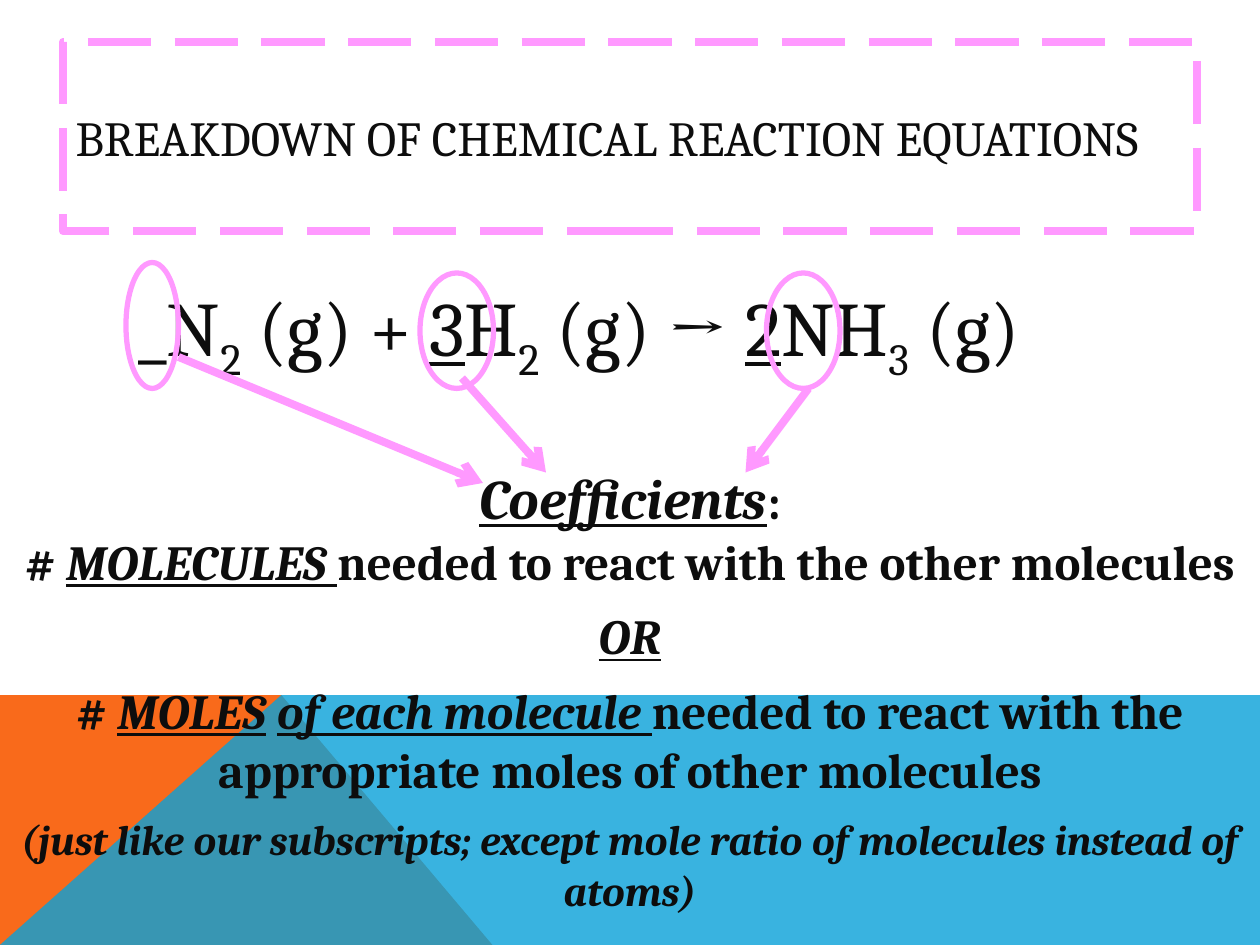
from lxml import etree
from pptx import Presentation
from pptx.dml.color import RGBColor
from pptx.enum.dml import MSO_LINE
from pptx.enum.shapes import MSO_CONNECTOR, MSO_SHAPE
from pptx.enum.text import MSO_ANCHOR, PP_ALIGN
from pptx.oxml.ns import qn
from pptx.util import Pt

PX = 7620  # EMU per px, 120 px to the inch
FONT = "Cambria"
COLORS = {"text": "0D0D0D", "pink": "FF99FF", "orange": "F96A1B", "blue": "08A1D9"}
DASH = MSO_LINE.LONG_DASH
OVAL, STRAIGHT = MSO_SHAPE.OVAL, MSO_CONNECTOR.STRAIGHT
LEFT, CENTER, MIDDLE = PP_ALIGN.LEFT, PP_ALIGN.CENTER, MSO_ANCHOR.MIDDLE


def rgb(name):
    return RGBColor.from_string(COLORS[name])


def add_run(p, text, size, style=""):
    """Style letters: b bold, i italic, u underline, s subscript."""
    r = p.add_run()
    r.text = text
    r.font.name, r.font.size = FONT, Pt(size)
    r.font.color.rgb = rgb("text")
    r.font.bold, r.font.italic, r.font.underline = (c in style for c in "biu")
    if "s" in style:
        r._r.get_or_add_rPr().set("baseline", "-25000")


prs = Presentation()
prs.slide_width, prs.slide_height = 1200 * PX, 900 * PX
s = prs.slides.add_slide(prs.slide_layouts[5])

# Coloured band at the foot
bands = [
    ("orange", [(0, 900), (0, 662), (268, 662), (469, 900)]),
    ("blue", [(0, 900), (268, 662), (1200, 662), (1200, 900)]),
]
for color, points in bands:
    builder = s.shapes.build_freeform(*points[0], scale=PX)
    builder.add_line_segments(points[1:], close=True)
    sp = builder.convert_to_shape()
    sp.shadow.inherit = False
    sp.fill.solid()
    sp.fill.fore_color.rgb = rgb(color)
    sp.line.fill.background()
    if color == "blue":
        clr = sp.fill._xPr.find(".//" + qn("a:srgbClr"))
        etree.SubElement(clr, qn("a:alpha"), val="80000")

# Title in a dashed frame
title = s.shapes.title
title.left, title.top, title.width, title.height = (v * PX for v in (60, 40, 1080, 180))
title.line.color.rgb = rgb("pink")
title.line.width = Pt(4.5)
title.line.dash_style = DASH
tf = title.text_frame
tf.word_wrap = True
tf.vertical_anchor = MIDDLE
p = tf.paragraphs[0]
p.alignment = LEFT
add_run(p, "BREAKDOWN OF CHEMICAL REACTION EQUATIONS", 28)

# Reaction equation
tf = s.shapes.add_textbox(120 * PX, 260 * PX, 950 * PX, 190 * PX).text_frame
tf.word_wrap = True
equation = [
    ("_N", ""), ("2", "s"), (" (g) + ", ""),
    ("3", "u"), ("H", ""), ("2", "s"), (" (g) → ", ""),
    ("2", "u"), ("NH", ""), ("3", "s"), (" (g)", ""),
]
for text, style in equation:
    add_run(tf.paragraphs[0], text, 44, style)

# Rings around the coefficients
for x, y, w, h in [(120, 250, 50, 120), (400, 260, 70, 110), (730, 260, 70, 110)]:
    sp = s.shapes.add_shape(OVAL, x * PX, y * PX, w * PX, h * PX)
    sp.shadow.inherit = False
    sp.fill.background()
    sp.line.color.rgb = rgb("pink")
    sp.line.width = Pt(3)

# Arrows from the rings to the explanation
for ends in [(170, 340, 460, 460), (770, 370, 710, 450), (440, 360, 520, 450)]:
    cxn = s.shapes.add_connector(STRAIGHT, *(v * PX for v in ends))
    cxn.line.color.rgb = rgb("pink")
    cxn.line.width = Pt(4.5)
    etree.SubElement(cxn.line._get_or_add_ln(), qn("a:tailEnd"), type="arrow")
    etree.SubElement(cxn._element.spPr, qn("a:effectLst"))

# Explanation: space before, then runs
explanation = [
    (0, [("Coefficients", 32, "biu"), (":", 28, "b")]),
    (0, [("# ", 28, "b"), ("MOLECULES ", 28, "biu"),
         ("needed to react with the other molecules", 28, "b")]),
    (9, [("OR", 28, "biu")]),
    (9, [("# ", 28, "b"), ("MOLES", 28, "biu"), (" ", 28, "b"),
         ("of each molecule ", 28, "biu"),
         ("needed to react with the appropriate moles of other molecules", 28, "b")]),
    (9, [("(just like our subscripts; except mole ratio of molecules instead of atoms)",
          24, "bi")]),
]
tf = s.shapes.add_textbox(0, 436 * PX, 1200 * PX, 449 * PX).text_frame
tf.word_wrap = True
for i, (gap, runs) in enumerate(explanation):
    p = tf.add_paragraph() if i else tf.paragraphs[0]
    p.alignment = CENTER
    p.space_before = Pt(gap)
    for text, size, style in runs:
        add_run(p, text, size, style)

prs.save("out.pptx")
